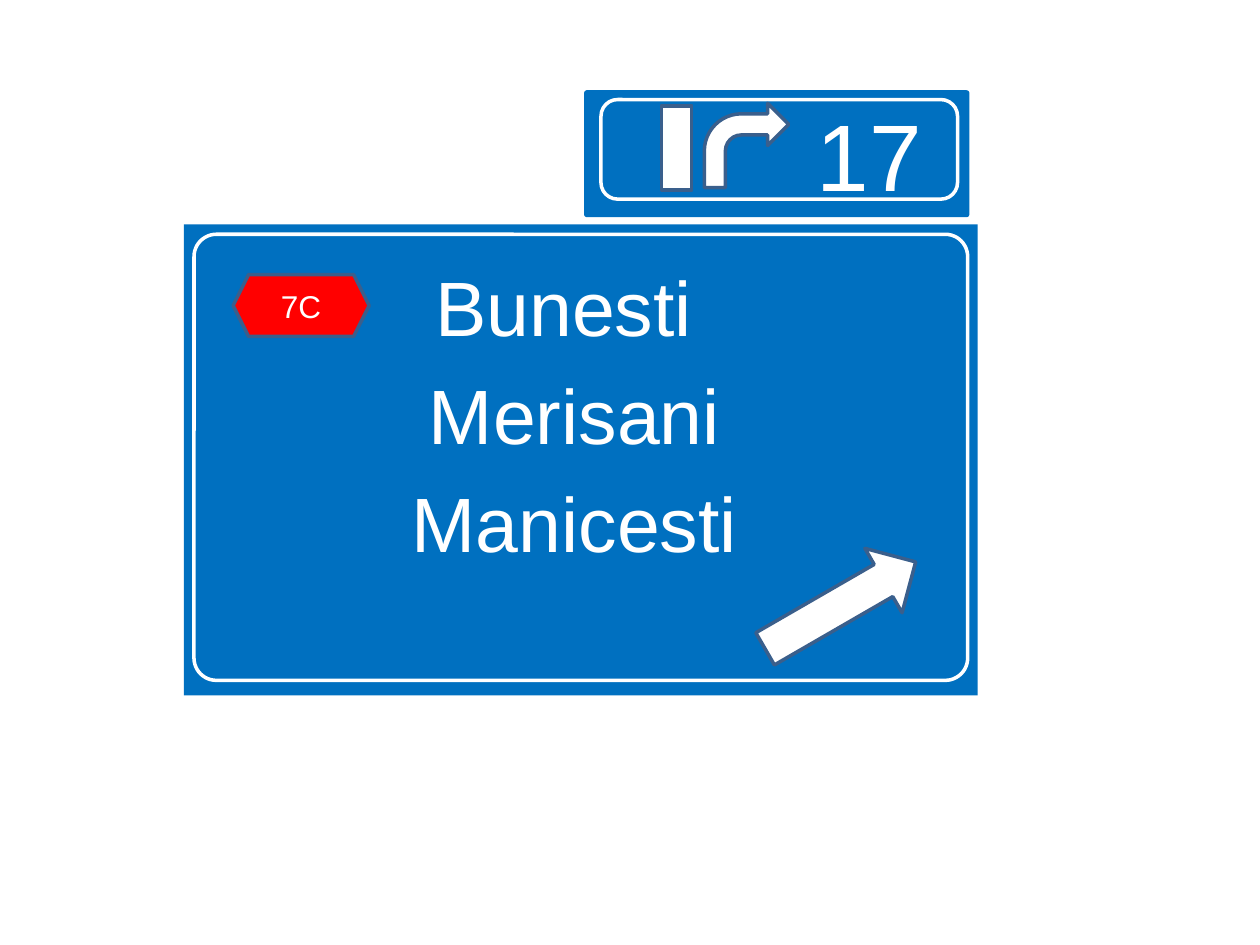
from dataclasses import dataclass

from pptx import Presentation
from pptx.dml.color import RGBColor
from pptx.enum.shapes import MSO_SHAPE
from pptx.enum.text import MSO_ANCHOR, MSO_AUTO_SIZE, PP_ALIGN
from pptx.util import Inches, Pt

RECTANGLE = MSO_SHAPE.RECTANGLE
ROUNDED = MSO_SHAPE.ROUNDED_RECTANGLE
HEXAGON = MSO_SHAPE.HEXAGON
RIGHT_ARROW = MSO_SHAPE.RIGHT_ARROW
BENT_ARROW = MSO_SHAPE.BENT_ARROW
CENTER = PP_ALIGN.CENTER
TOP, MIDDLE = MSO_ANCHOR.TOP, MSO_ANCHOR.MIDDLE
NO_AUTOFIT = MSO_AUTO_SIZE.NONE


@dataclass(frozen=True)
class Theme:
    font: str = "Arial"
    blue: RGBColor = RGBColor(0x00, 0x70, 0xC0)
    red: RGBColor = RGBColor(0xFF, 0x00, 0x00)
    white: RGBColor = RGBColor(0xFF, 0xFF, 0xFF)
    outline: RGBColor = RGBColor(0x3A, 0x5F, 0x8C)
    line_width: int = 2
    road_size: int = 18
    town_size: int = 44
    exit_size: int = 54


THEME = Theme()


def add_sign_shape(page, kind, bounds, fill=None, line=THEME.outline, adjustments=()):
    """Add a flat outlined shape; without a fill it is a frame."""
    shape = page.shapes.add_shape(kind, *map(Inches, bounds))
    shape.shadow.inherit = False
    if fill is None:
        shape.fill.background()
    else:
        shape.fill.solid()
        shape.fill.fore_color.rgb = fill
    shape.line.color.rgb = line
    shape.line.width = Pt(THEME.line_width)
    for index, value in enumerate(adjustments):
        shape.adjustments[index] = value
    return shape


def write_lines(shape, lines, size, anchor=MIDDLE, insets=(0.1, 0.05, 0.1, 0.05)):
    """Write centred white lettering, one paragraph a line."""
    frame = shape.text_frame
    frame.word_wrap = True
    frame.auto_size = NO_AUTOFIT
    frame.vertical_anchor = anchor
    (frame.margin_left, frame.margin_top,
     frame.margin_right, frame.margin_bottom) = map(Inches, insets)
    frame.text = "\n".join(lines)
    for para in frame.paragraphs:
        para.alignment = CENTER
        para.font.name = THEME.font
        para.font.size = Pt(size)
        para.font.color.rgb = THEME.white


def fill_town_panel(panel, towns):
    """Turn the subtitle placeholder into the blue panel of towns."""
    panel.left, panel.top, panel.width, panel.height = map(
        Inches, (1.46, 1.78, 6.3, 3.74))
    panel.fill.solid()
    panel.fill.fore_color.rgb = THEME.blue
    write_lines(panel, towns, THEME.town_size, TOP, (0, 0.28, 0.1, 0.24))


def main():
    deck = Presentation()
    deck.slide_width, deck.slide_height = Inches(10), Inches(7.5)
    page = deck.slides.add_slide(deck.slide_layouts[0])
    title = page.shapes.title
    title.element.getparent().remove(title.element)

    # Direction sign: towns, road number, exit arrow, frame
    fill_town_panel(page.placeholders[1], ["Bunesti ", "Merisani", "Manicesti"])
    road = add_sign_shape(page, HEXAGON, (1.85, 2.18, 1.08, 0.49), THEME.red)
    write_lines(road, ["7C"], THEME.road_size)
    arrow = add_sign_shape(page, RIGHT_ARROW, (5.98, 4.51, 1.38, 0.59), THEME.white)
    arrow.rotation = 330
    add_sign_shape(page, ROUNDED, (1.54, 1.86, 6.14, 3.54),
                   line=THEME.white, adjustments=[0.05])

    # Exit number plate: panel, frame
    plate = add_sign_shape(page, ROUNDED, (4.65, 0.73, 3.03, 0.98),
                           THEME.blue, THEME.blue, [0.01])
    write_lines(plate, ["17"], THEME.exit_size, insets=(1.57, 0.05, 0.1, 0.05))
    add_sign_shape(page, ROUNDED, (4.77, 0.79, 2.83, 0.79), line=THEME.white)

    # Exit symbol: main road and turn-off
    add_sign_shape(page, RECTANGLE, (5.25, 0.84, 0.24, 0.67), THEME.white)
    add_sign_shape(page, BENT_ARROW, (5.59, 0.82, 0.67, 0.67), THEME.white,
                   adjustments=[0.25, 0.25, 0.25, 0.44])

    deck.save("out.pptx")


if __name__ == "__main__":
    main()
